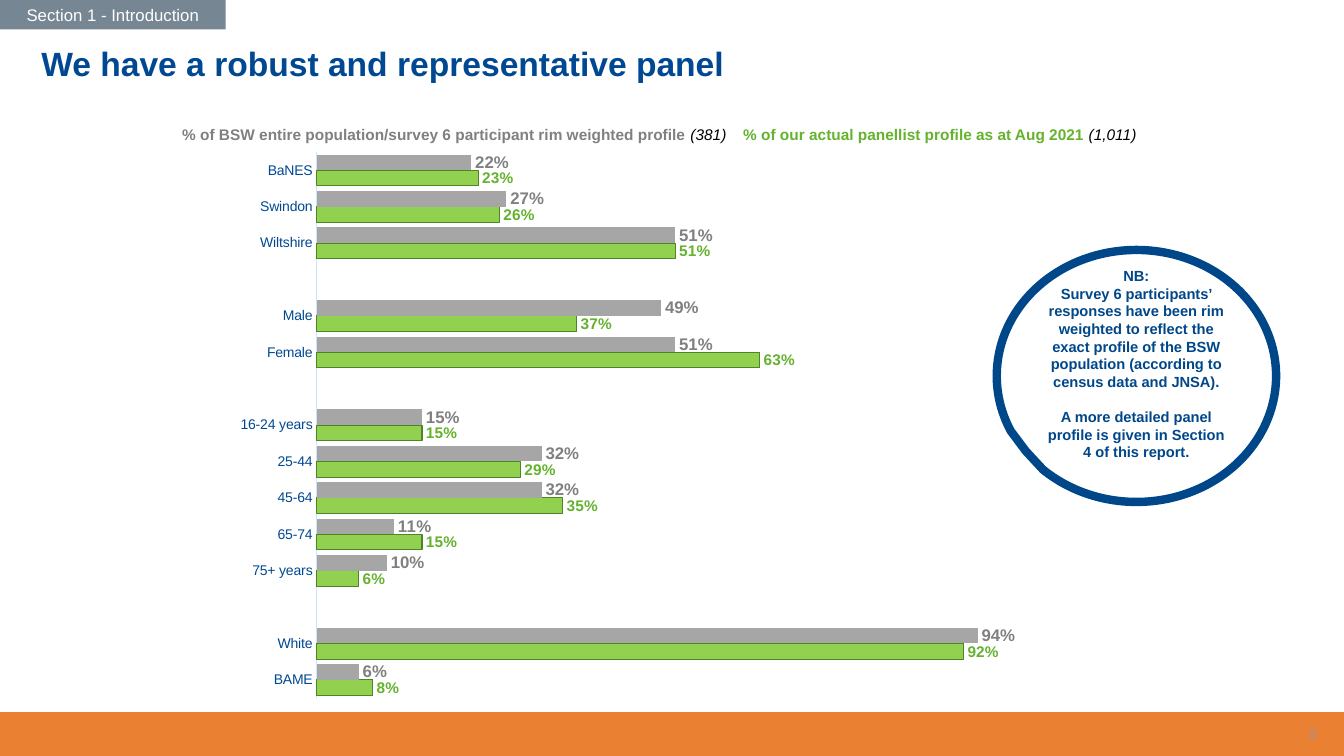
from lxml import etree
from pptx import Presentation
from pptx import util as u
from pptx.chart.data import CategoryChartData
from pptx.dml.color import RGBColor
from pptx.enum import chart as charts, shapes, text
from pptx.oxml.ns import qn

COLOURS = {
    "navy": "004992", "ring": "00478A", "slate": "768692", "orange": "EA8132",
    "white": "FFFFFF", "black": "000000", "number": "8C95B6",
    "grey bar": "A6A6A6", "grey text": "808080",
    "green bar": "92D050", "green edge": "4C8523", "green text": "64B22D",
    "axis": "C8E4FF",
}
# Category, weighted population profile, actual panellist profile
PROFILE = [
    ("BaNES", 0.22, 0.23), ("Swindon", 0.27, 0.26), ("Wiltshire", 0.51, 0.51),
    ("", None, None),
    ("Male", 0.49, 0.37), ("Female", 0.51, 0.63),
    ("", None, None),
    ("16-24 years", 0.15, 0.15), ("25-44", 0.32, 0.29), ("45-64", 0.32, 0.35),
    ("65-74", 0.11, 0.15), ("75+ years", 0.10, 0.06),
    ("", None, None),
    ("White", 0.94, 0.92), ("BAME", 0.06, 0.08),
]


def colour(name):
    return RGBColor.from_string(COLOURS[name])


def cm(*lengths):
    return [u.Cm(length) for length in lengths]


def apply(target, **values):
    for name, value in values.items():
        setattr(target, name, value)


def style_font(font, size, colour_name, **values):
    apply(font, name="Arial", size=u.Pt(size), **values)
    font.color.rgb = colour(colour_name)


def paint(target, fill, line=None, width=0.75):
    """Set fill and outline; None leaves that part empty."""
    for fill_format, name in ((target.fill, fill), (target.line.fill, line)):
        if name:
            fill_format.solid()
            fill_format.fore_color.rgb = colour(name)
        else:
            fill_format.background()
    if line:
        target.line.width = u.Pt(width)


def add_shape(slide, kind, box, fill, line=None, width=0.75):
    shape = slide.shapes.add_shape(kind, *cm(*box))
    shape.shadow.inherit = False
    paint(shape, fill, line, width)
    return shape


def add_footer(slide, box):
    left, top, width, height = box
    add_shape(slide, shapes.MSO_SHAPE.RECTANGLE, box, "orange", "orange", 1)
    number = slide.shapes.add_textbox(*cm(left + width - 8.05, top + 0.02, 7.62, height - 0.07))
    apply(number.text_frame, word_wrap=True, vertical_anchor=text.MSO_ANCHOR.MIDDLE)
    paragraph = number.text_frame.paragraphs[0]
    apply(paragraph, text="5", alignment=text.PP_ALIGN.RIGHT)
    style_font(paragraph.font, 9, "number")


def add_section_tab(slide, box):
    tab = add_shape(slide, shapes.MSO_SHAPE.RECTANGLE, box, "slate")
    apply(tab.text_frame, word_wrap=True, vertical_anchor=text.MSO_ANCHOR.MIDDLE)
    paragraph = tab.text_frame.paragraphs[0]
    apply(paragraph, text="Section 1 - Introduction", alignment=text.PP_ALIGN.CENTER)
    style_font(paragraph.font, 12, "white")


def set_title(slide, box):
    title = slide.shapes.title
    apply(title, **dict(zip(("left", "top", "width", "height"), cm(*box))))
    apply(title.text_frame, word_wrap=True, auto_size=text.MSO_AUTO_SIZE.NONE,
          vertical_anchor=text.MSO_ANCHOR.TOP,
          margin_left=u.Cm(0.61), margin_right=u.Cm(0.61))
    paragraph = title.text_frame.paragraphs[0]
    apply(paragraph, text="We have a robust and representative panel",
          alignment=text.PP_ALIGN.LEFT, line_spacing=0.9, space_before=u.Pt(0))
    style_font(paragraph.font, 24, "navy", bold=True)


def add_key(slide, box):
    """Coloured line of text that serves as the chart's legend."""
    key = slide.shapes.add_textbox(*cm(*box))
    key.text_frame.word_wrap = True
    paragraph = key.text_frame.paragraphs[0]
    tabs = etree.SubElement(paragraph._p.get_or_add_pPr(), qn("a:tabLst"))
    etree.SubElement(tabs, qn("a:tab"), pos=str(u.Cm(14.14)), algn="l")
    for words, name, is_count in (
        ("% of BSW entire population/survey 6 participant rim weighted profile ", "grey text", False),
        ("(381)\t", "black", True),
        ("% of our actual panellist profile as at Aug 2021 ", "green text", False),
        ("(1,011)", "black", True),
    ):
        run = paragraph.add_run()
        run.text = words
        style_font(run.font, 11, name, bold=not is_count, italic=is_count)


def set_plot_area(chart, **fractions):
    """Fix the inner plot area as fractions of the chart."""
    plot_area = chart._chartSpace.chart.plotArea
    for old in plot_area.findall(qn("c:layout")):
        plot_area.remove(old)
    layout = etree.Element(qn("c:layout"))
    plot_area.insert(0, layout)
    manual = etree.SubElement(layout, qn("c:manualLayout"))
    settings = {"layoutTarget": "inner", "xMode": "edge", "yMode": "edge", **fractions}
    for tag, value in settings.items():
        etree.SubElement(manual, qn(f"c:{tag}"), val=str(value))


def add_profile_chart(slide, box):
    # Bar charts run upwards, so the rows are given last to first.
    names, population, panel = zip(*reversed(PROFILE))
    data = CategoryChartData(number_format="0%")
    data.categories = names
    data.add_series("Series 1", panel)
    data.add_series("Series 2", population)
    chart = slide.shapes.add_chart(charts.XL_CHART_TYPE.BAR_CLUSTERED, *cm(*box), data).chart
    apply(chart, has_legend=False, has_title=False)
    style_font(chart.font, 10, "navy")
    set_plot_area(chart, x=0.112, y=0.019, w=0.868, h=0.959)

    apply(chart.value_axis, visible=False, has_major_gridlines=False,
          minimum_scale=0, maximum_scale=1)
    axis = chart.category_axis
    apply(axis, major_tick_mark=charts.XL_TICK_MARK.NONE,
          minor_tick_mark=charts.XL_TICK_MARK.NONE)
    style_font(axis.tick_labels.font, 10, "navy")
    axis.format.line.color.rgb = colour("axis")
    axis.format.line.width = u.Pt(0.75)

    plot = chart.plots[0]
    apply(plot, gap_width=33, overlap=0, vary_by_categories=False)
    looks = (("green bar", "green edge", "green text", 11),
             ("grey bar", None, "grey text", 12))
    for series, (fill, edge, label_colour, size) in zip(plot.series, looks):
        paint(series.format, fill, edge)
        labels = series.data_labels
        apply(labels, show_value=True, number_format="0%", number_format_is_linked=False,
              position=charts.XL_LABEL_POSITION.OUTSIDE_END)
        style_font(labels.font, size, label_colour, bold=True)


def add_callout(slide, box):
    callout = add_shape(slide, shapes.MSO_SHAPE.OVAL_CALLOUT, box, None, "ring", 6)
    callout.adjustments[0] = -0.396
    callout.adjustments[1] = 0.298
    frame = callout.text_frame
    apply(frame, word_wrap=True, vertical_anchor=text.MSO_ANCHOR.MIDDLE,
          margin_top=0, margin_bottom=u.Cm(0.61))
    notes = (
        ("NB:", 0),
        ("Survey 6 participants’ responses have been rim weighted to reflect the exact "
         "profile of the BSW population (according to census data and JNSA).", 0),
        ("A more detailed panel profile is given in Section 4 of this report.", 12.5),
    )
    for index, (words, space) in enumerate(notes):
        paragraph = frame.add_paragraph() if index else frame.paragraphs[0]
        apply(paragraph, text=words, alignment=text.PP_ALIGN.CENTER, space_before=u.Pt(space))
        style_font(paragraph.font, 10.5, "ring", bold=True)


def main():
    presentation = Presentation()
    apply(presentation, slide_width=u.Cm(33.87), slide_height=u.Cm(19.05))
    slide = presentation.slides.add_slide(presentation.slide_layouts[5])
    add_footer(slide, (0, 17.96, 33.87, 1.09))
    add_section_tab(slide, (0, 0, 5.69, 0.74))
    add_profile_chart(slide, (5.69, 3.56, 20.42, 14.35))
    set_title(slide, (0.43, 1.07, 32.61, 1.8))
    add_callout(slide, (25.12, 6.3, 7.04, 6.35))
    add_key(slide, (4.34, 3.02, 25.76, 1.12))
    presentation.save("out.pptx")


if __name__ == "__main__":
    main()
